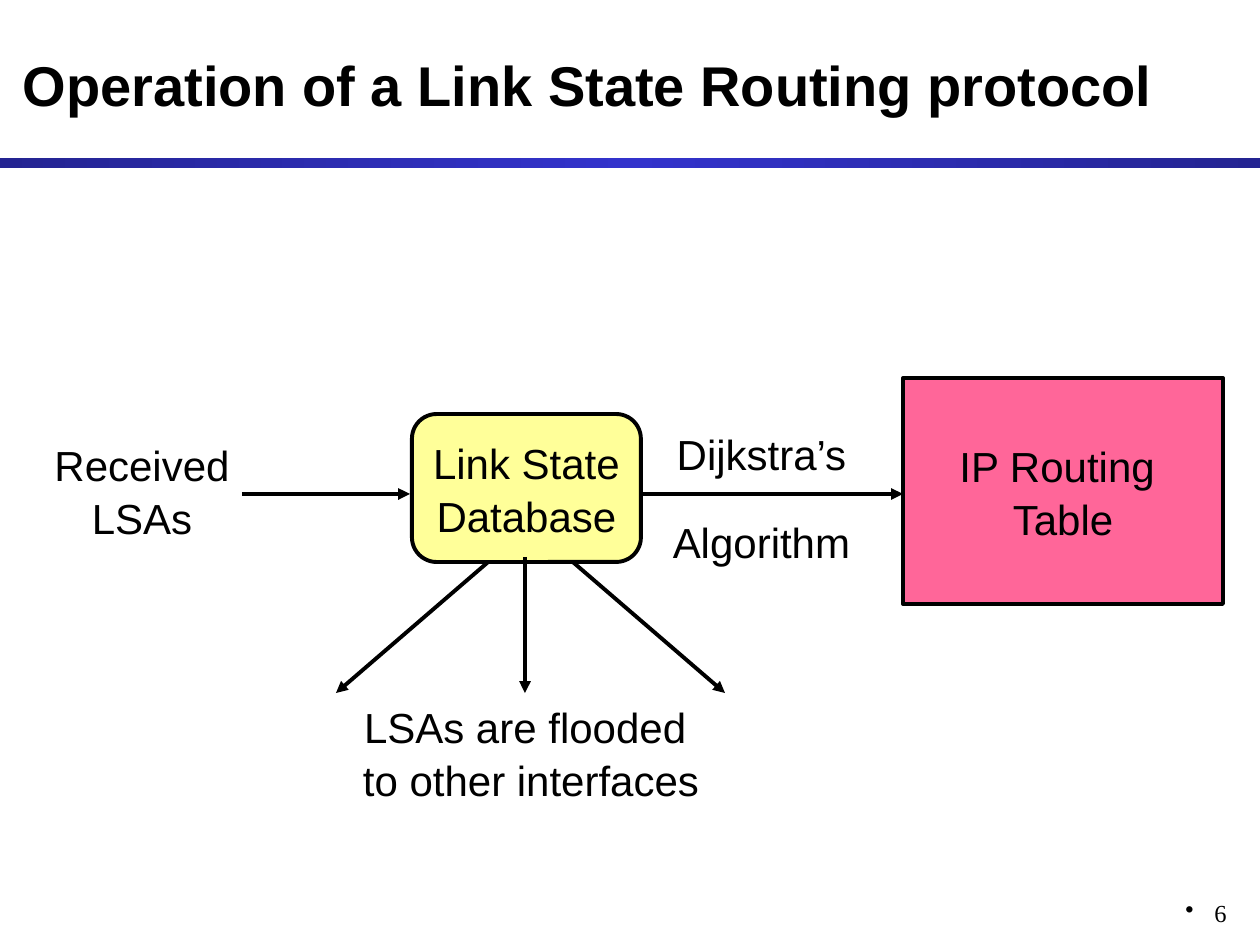
import copy

import pptx
import pptx.dml.color
import pptx.enum.shapes
import pptx.enum.text
import pptx.oxml.ns
import pptx.util
from lxml import etree

RGBColor = pptx.dml.color.RGBColor
MSO_SHAPE = pptx.enum.shapes.MSO_SHAPE
PP_ALIGN = pptx.enum.text.PP_ALIGN
MSO_ANCHOR = pptx.enum.text.MSO_ANCHOR
MSO_AUTO_SIZE = pptx.enum.text.MSO_AUTO_SIZE
qn = pptx.oxml.ns.qn

BLACK = RGBColor(0x00, 0x00, 0x00)
NAVY = RGBColor(0x24, 0x24, 0x92)
BLUE = RGBColor(0x33, 0x33, 0xCC)
PINK = RGBColor(0xFF, 0x66, 0x99)
YELLOW = RGBColor(0xFF, 0xFF, 0x99)
LINE_WIDTH = pptx.util.Pt(2.25)


def px(n):
    """Turn px at 126 to the inch into EMU."""
    return round(n * 914400 / 126)


def format_run(r, size, name="Arial", bold=False):
    """Set the font of one run."""
    r.font.size = pptx.util.Pt(size)
    r.font.name = name
    r.font.bold = bold
    r.font.color.rgb = BLACK


def fill_label(tf, paragraphs):
    """Write centred diagram text, one paragraph for each string."""
    tf.word_wrap = False
    for i, text in enumerate(paragraphs):
        p = tf.add_paragraph() if i else tf.paragraphs[0]
        p.text = text
        p.alignment = PP_ALIGN.CENTER
        p.line_spacing = 1.05
        p.space_before = p.space_after = pptx.util.Pt(10)
        for r in p.runs:
            format_run(r, 24)


def add_label(s, x, y, w, h, *paragraphs):
    """Add a text label to the diagram."""
    sp = s.shapes.add_textbox(px(x), px(y), px(w), px(h))
    fill_label(sp.text_frame, paragraphs)


def add_node(s, kind, x, y, w, h, color, text):
    """Add a filled, outlined diagram node."""
    sp = s.shapes.add_shape(kind, px(x), px(y), px(w), px(h))
    sp.shadow.inherit = False
    sp.fill.solid()
    sp.fill.fore_color.rgb = color
    sp.line.color.rgb = BLACK
    sp.line.width = LINE_WIDTH
    sp.text_frame.vertical_anchor = MSO_ANCHOR.MIDDLE
    fill_label(sp.text_frame, [text])


def add_arrow(s, x1, y1, x2, y2):
    """Add a straight arrow pointing at its second end."""
    cx = s.shapes.add_connector(
        pptx.enum.shapes.MSO_CONNECTOR.STRAIGHT, px(x1), px(y1), px(x2), px(y2))
    cx.line.color.rgb = BLACK
    cx.line.width = LINE_WIDTH
    etree.SubElement(cx.line._get_or_add_ln(), qn("a:tailEnd"), type="triangle")
    etree.SubElement(cx._element.spPr, qn("a:effectLst"))


def add_header(s, x, y, w, h):
    """Place the title with a gradient rule along the bottom of the box."""
    bar = s.shapes.add_shape(MSO_SHAPE.RECTANGLE, px(x), px(y + h - 10), px(w), px(10))
    bar.shadow.inherit = False
    bar.line.fill.background()
    bar.fill.gradient()
    bar.fill.gradient_angle = 0
    stops = bar._element.spPr.find(qn("a:gradFill")).find(qn("a:gsLst"))
    stops.append(copy.deepcopy(stops[0]))
    for stop, position, color in zip(
            bar.fill.gradient_stops, (0, 0.5, 1), (NAVY, BLUE, NAVY)):
        stop.position = position
        stop.color.rgb = color

    title = s.shapes.title
    title.left, title.top = px(x + 10), px(y + 21)
    title.width, title.height = px(w - 21), px(126)
    tf = title.text_frame
    tf.text = "Operation of a Link State Routing protocol"
    tf.auto_size = MSO_AUTO_SIZE.NONE
    tf.vertical_anchor = MSO_ANCHOR.MIDDLE
    p = tf.paragraphs[0]
    p.alignment = PP_ALIGN.LEFT
    format_run(p.runs[0], 32, bold=True)


def add_diagram(s, x, y, w, h):
    """Place the flow from received LSAs to the routing table."""
    flow_y, fan_y = y + 116, y + 179
    fan_x, fan_end = x + 483, y + h - 131
    add_label(s, x, y + 53, 200, 131, "Received\nLSAs")
    add_node(s, MSO_SHAPE.RECTANGLE, x + w - 320, y, 320, 226, PINK,
             "IP Routing \nTable")
    add_label(s, x + 618, y + 42, 203, 166, "Dijkstra’s", "Algorithm")
    for start, end in ((200, 368), (598, 861)):
        add_arrow(s, x + start, flow_y, x + end, flow_y)
    for start, end in ((-31, -189), (42, 200)):
        add_arrow(s, fan_x + start, fan_y, fan_x + end, fan_end)
    add_node(s, MSO_SHAPE.ROUNDED_RECTANGLE, x + 370, y + 36, 229, 148, YELLOW,
             "Link State\nDatabase")
    add_arrow(s, fan_x, fan_y, fan_x, fan_end)
    add_label(s, x + 308, fan_end, 362, 131, "LSAs are flooded \nto other interfaces")


def add_page_number(s, x, y, w, h):
    """Place the bulleted page number at the right of the box."""
    sp = s.shapes.add_textbox(px(x), px(y), px(w), px(h))
    tf = sp.text_frame
    tf.word_wrap = True
    tf.text = "6"
    p = tf.paragraphs[0]
    p.alignment = PP_ALIGN.RIGHT
    format_run(p.runs[0], 14, "Times New Roman")
    pPr = p._p.get_or_add_pPr()
    pPr.set("marL", str(px(29)))
    pPr.set("indent", str(px(-29)))
    etree.SubElement(pPr, qn("a:buFontTx"))
    etree.SubElement(pPr, qn("a:buChar"), char="•")


def main():
    """Build and save the slide."""
    prs = pptx.Presentation()
    prs.slide_width, prs.slide_height = px(1260), px(945)
    s = prs.slides.add_slide(prs.slide_layouts[5])
    add_header(s, 0, 0, 1260, 168)
    add_page_number(s, 977, 892, 262, 32)
    add_diagram(s, 42, 378, 1181, 446)
    prs.save("out.pptx")


if __name__ == "__main__":
    main()
